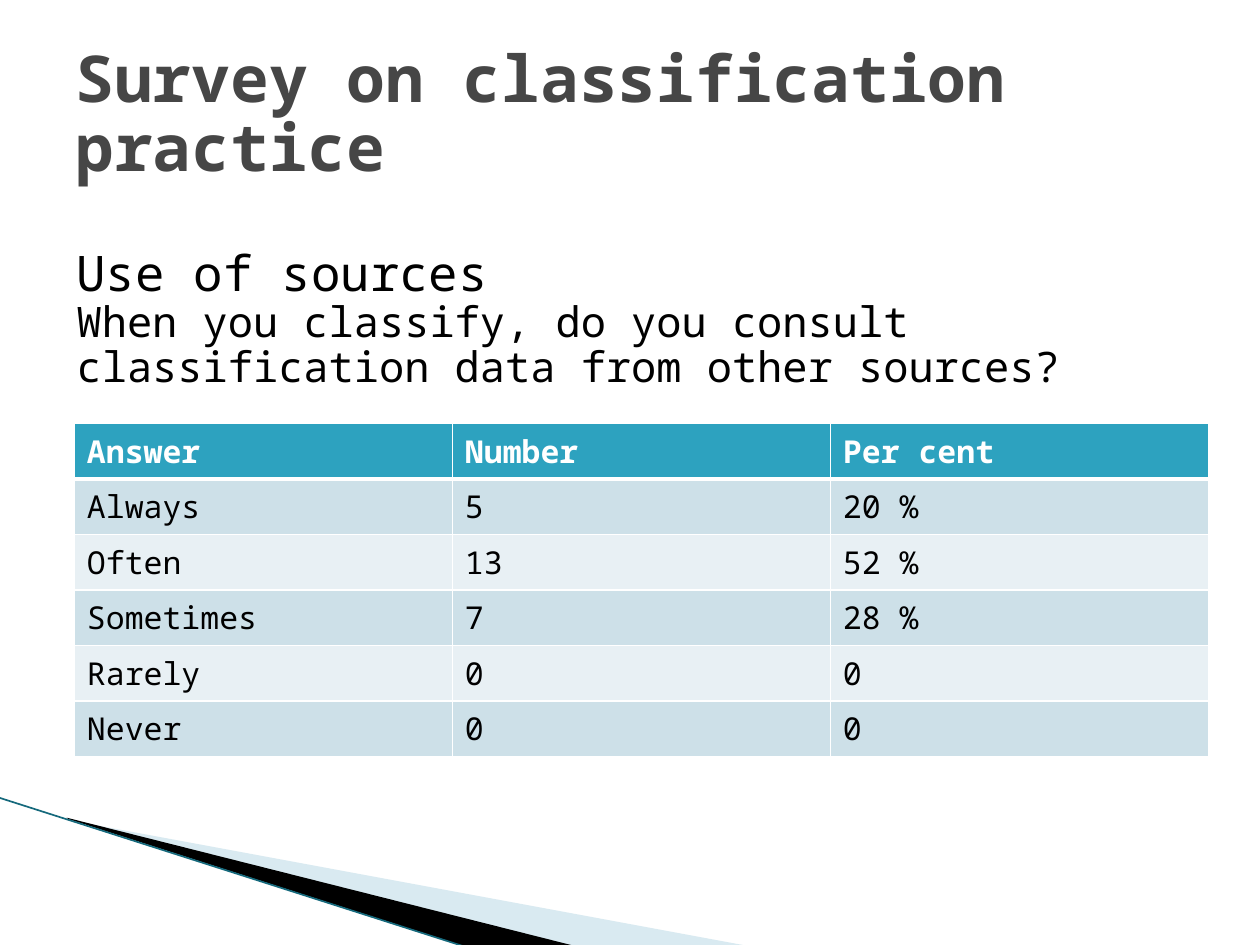
from lxml.etree import SubElement
from pptx import Presentation
from pptx.dml.color import RGBColor
from pptx.enum.shapes import MSO_CONNECTOR
from pptx.enum.text import MSO_ANCHOR
from pptx.oxml.ns import qn
from pptx.util import Inches, Pt

FONT = "Noto Sans Mono"
COLORS = {
    "title": "464646", "text": "000000", "white": "FFFFFF", "head": "2DA2BF",
    "odd": "CDE0E8", "even": "E8F0F4", "pale": "A0CBDC", "edge": "15697C",
}
TITLE = [("Survey on classification practice", 36.9)]
BODY = [
    ("Use of sources", 28),
    ("When you classify, do you consult classification data from other sources?", 24),
]
ROWS = [
    ("Answer", "Number", "Per cent"),
    ("Always", "5", "20 %"),
    ("Often", "13", "52 %"),
    ("Sometimes", "7", "28 %"),
    ("Rarely", "0", "0"),
    ("Never", "0", "0"),
]
# Points, colour, opacity in per cent
WEDGES = [
    ([(0.55, 6.51), (5.95, 7.51), (4.56, 7.51), (0.55, 6.5)], "pale", 40),
    ([(0.53, 6.49), (4.57, 7.51), (3.72, 7.52), (0.54, 6.5)], "text", 100),
]
COL_W, ROW_H = 3, 0.44


def rgb(name):
    return RGBColor.from_string(COLORS[name])


def add_run(par, text, size, color, bold=False):
    run = par.add_run()
    run.text = text
    font = run.font
    font.name, font.size, font.bold = FONT, Pt(size), bold
    font.color.rgb = rgb(color)


def add_text(slide, box, lines, color, bold=False, anchor=MSO_ANCHOR.TOP):
    frame = slide.shapes.add_textbox(*map(Inches, box)).text_frame
    frame.word_wrap = True
    frame.vertical_anchor = anchor
    for i, (text, size) in enumerate(lines):
        par = frame.add_paragraph() if i else frame.paragraphs[0]
        par.line_spacing = 0.89
        add_run(par, text, size, color, bold)


def add_wedge(slide, points, color, alpha):
    pts = [(Inches(x), Inches(y)) for x, y in points]
    form = slide.shapes.build_freeform(*pts[0])
    form.add_line_segments(pts[1:], close=True)
    wedge = form.convert_to_shape()
    wedge.shadow.inherit = False
    wedge.line.fill.background()
    wedge.fill.solid()
    wedge.fill.fore_color.rgb = rgb(color)
    if alpha < 100:
        tint = wedge.fill._xPr.find(".//" + qn("a:srgbClr"))
        SubElement(tint, qn("a:alpha"), val=str(alpha * 1000))


def add_edge(slide):
    edge = slide.shapes.add_connector(
        MSO_CONNECTOR.STRAIGHT, *map(Inches, (-0.01, 6.33, 3.71, 7.52)))
    edge.line.color.rgb = rgb("edge")
    edge.line.width = Pt(0.95)
    SubElement(edge._element.spPr, qn("a:effectLst"))


def style_cell(cell, fill, base):
    """Fill the cell and rule it in white, with the bottom rule base points wide."""
    props = cell._tc.get_or_add_tcPr()
    for side, width in (("L", 1), ("R", 1), ("T", 1), ("B", base)):
        rule = SubElement(props, qn("a:ln" + side), w=str(Pt(width)))
        paint = SubElement(rule, qn("a:solidFill"))
        SubElement(paint, qn("a:srgbClr"), val=COLORS["white"])
    cell.fill.solid()
    cell.fill.fore_color.rgb = rgb(fill)


def add_answers(slide):
    cols = len(ROWS[0])
    table = slide.shapes.add_table(
        len(ROWS), cols, Inches(0.59), Inches(3.36),
        Inches(COL_W * cols), Inches(ROW_H * len(ROWS))).table
    for r, row in enumerate(ROWS):
        head = r == 0
        fill = "head" if head else "odd" if r % 2 else "even"
        for c, text in enumerate(row):
            cell = table.cell(r, c)
            style_cell(cell, fill, 3 if head else 1)
            add_run(cell.text_frame.paragraphs[0], text, 18,
                    "white" if head else "text", head)


def main():
    deck = Presentation()
    deck.slide_width, deck.slide_height = Inches(10), Inches(7.5)
    slide = deck.slides.add_slide(deck.slide_layouts[6])
    for wedge in WEDGES:
        add_wedge(slide, *wedge)
    add_edge(slide)
    add_answers(slide)
    add_text(slide, (0.5, 0.3, 9, 1.25), TITLE, "title", True, MSO_ANCHOR.MIDDLE)
    add_text(slide, (0.51, 1.93, 8.76, 1.38), BODY, "text")
    deck.save("out.pptx")


if __name__ == "__main__":
    main()
